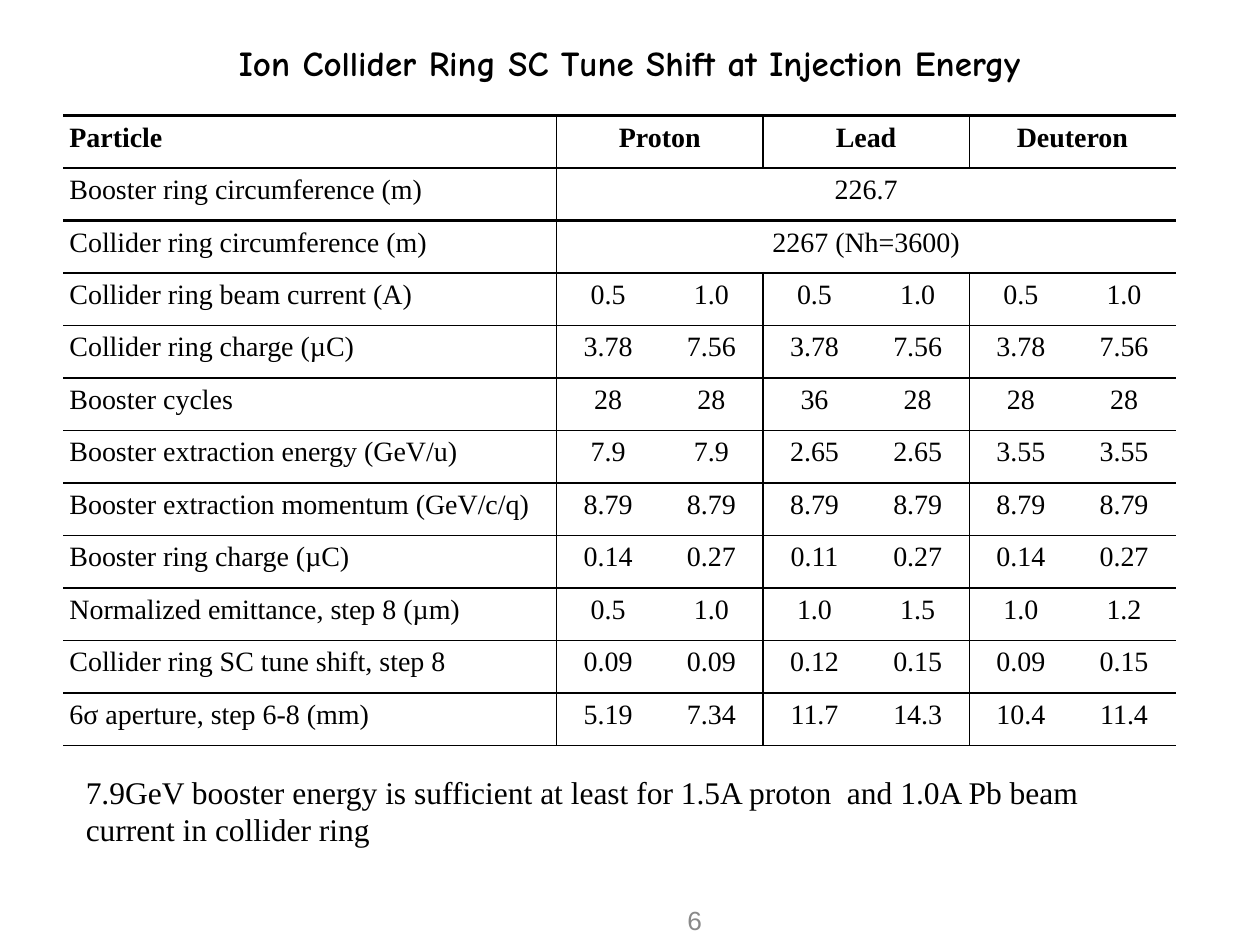
from lxml import etree
from pptx import Presentation
from pptx.dml.color import RGBColor
from pptx.enum.text import MSO_ANCHOR, PP_ALIGN
from pptx.oxml.ns import qn
from pptx.util import Cm, Pt

LEFT, CENTER, RIGHT = PP_ALIGN.LEFT, PP_ALIGN.CENTER, PP_ALIGN.RIGHT
TOP, MIDDLE = MSO_ANCHOR.TOP, MSO_ANCHOR.MIDDLE

BLACK = "000000"
GRAY = "898989"
SERIF = "Times New Roman"

TITLE_FORMAT = {"name": "Comic Neue", "size": Pt(20), "bold": True}
TABLE_FORMAT = {"name": SERIF, "size": Pt(16), "bold": False}
HEADER_FORMAT = {**TABLE_FORMAT, "bold": True}
NOTE_FORMAT = {"name": SERIF, "size": Pt(18)}
NUMBER_FORMAT = {"name": "Arial", "size": Pt(15)}

VALUE_COLUMNS = 6
HEAVY_LINES = 4
LABEL_WIDTH = Cm(9.95)
CELL_MARGINS = dict.fromkeys(
    ("margin_left", "margin_right", "margin_top", "margin_bottom"), Cm(0.13)
)

ROWS = [
    ("Particle", "Proton", "Lead", "Deuteron"),
    ("Booster ring circumference (m)", "226.7"),
    ("Collider ring circumference (m)", "2267 (Nh=3600)"),
    ("Collider ring beam current (A)", "0.5", "1.0", "0.5", "1.0", "0.5", "1.0"),
    ("Collider ring charge (µC)", "3.78", "7.56", "3.78", "7.56", "3.78", "7.56"),
    ("Booster cycles", "28", "28", "36", "28", "28", "28"),
    ("Booster extraction energy (GeV/u)", "7.9", "7.9", "2.65", "2.65", "3.55", "3.55"),
    ("Booster extraction momentum (GeV/c/q)", "8.79", "8.79", "8.79", "8.79", "8.79", "8.79"),
    ("Booster ring charge (µC)", "0.14", "0.27", "0.11", "0.27", "0.14", "0.27"),
    ("Normalized emittance, step 8 (µm)", "0.5", "1.0", "1.0", "1.5", "1.0", "1.2"),
    ("Collider ring SC tune shift, step 8", "0.09", "0.09", "0.12", "0.15", "0.09", "0.15"),
    ("6σ aperture, step 6-8 (mm)", "5.19", "7.34", "11.7", "14.3", "10.4", "11.4"),
]


def color(value):
    """Return the colour for a hex string."""
    return RGBColor.from_string(value)


def set_attributes(target, values):
    """Set each attribute of the target from a dict."""
    for name, value in values.items():
        setattr(target, name, value)


def write_text(text_frame, text, text_format, alignment=LEFT, text_color=BLACK):
    """Write one formatted paragraph and return it."""
    paragraph = text_frame.paragraphs[0]
    paragraph.alignment = alignment
    run = paragraph.add_run()
    run.text = text
    set_attributes(run.font, text_format)
    run.font.color.rgb = color(text_color)
    return paragraph


def add_text(slide, box, text, text_format, alignment=LEFT, anchor=TOP, text_color=BLACK):
    """Place a wrapped text box."""
    text_frame = slide.shapes.add_textbox(*box).text_frame
    set_attributes(text_frame, {"word_wrap": True, "vertical_anchor": anchor})
    write_text(text_frame, text, text_format, alignment, text_color)


def set_borders(cell, widths):
    """Draw the cell borders, given in points by side, and hide those of zero."""
    properties = cell._tc.get_or_add_tcPr()
    for side in "LRTB":
        width = widths[side]
        line = etree.SubElement(properties, qn(f"a:ln{side}"), w=str(Pt(width)))
        if width:
            fill = etree.SubElement(line, qn("a:solidFill"))
            etree.SubElement(fill, qn("a:srgbClr"), val=BLACK)
        else:
            etree.SubElement(line, qn("a:noFill"))


def style_cell(cell, row, column, span):
    """Set the margins, borders and fill of one table cell."""
    set_attributes(cell, CELL_MARGINS)
    has_left = column % 2 == 1 and (column - 1) % span == 0
    has_right = column == 0 or (
        column % 2 == 0 and column % span == 0 and column < VALUE_COLUMNS
    )
    set_borders(cell, {
        "L": int(has_left),
        "R": int(has_right),
        "T": 1.5 if row < HEAVY_LINES else 1,
        "B": 1.5 if row + 1 < HEAVY_LINES else 1,
    })
    cell.fill.background()


def add_parameter_table(slide, box):
    """Place the ring parameter table, spreading the values of each row evenly."""
    left, top, width, height = box
    table = slide.shapes.add_table(len(ROWS), VALUE_COLUMNS + 1, *box).table
    set_attributes(table, {"first_row": False, "horz_banding": False})
    for column in table.columns:
        column.width = (width - LABEL_WIDTH) // VALUE_COLUMNS
    table.columns[0].width = LABEL_WIDTH
    for row, (label, *values) in enumerate(ROWS):
        table.rows[row].height = height // len(ROWS)
        span = VALUE_COLUMNS // len(values)
        text_format = TABLE_FORMAT if row else HEADER_FORMAT
        for column in range(VALUE_COLUMNS + 1):
            style_cell(table.cell(row, column), row, column, span)
        write_text(table.cell(row, 0).text_frame, label, text_format).space_after = Pt(3)
        for index, value in enumerate(values):
            first = 1 + index * span
            cell = table.cell(row, first)
            if span > 1:
                cell.merge(table.cell(row, first + span - 1))
            write_text(cell.text_frame, value, text_format, CENTER).space_after = Pt(3)


def main():
    """Build and save the presentation."""
    presentation = Presentation()
    set_attributes(presentation, {"slide_width": Cm(25.4), "slide_height": Cm(19.05)})
    slide = presentation.slides.add_slide(presentation.slide_layouts[6])
    add_text(
        slide, (Cm(1.9), Cm(0), Cm(21.6), Cm(2.54)),
        "Ion Collider Ring SC Tune Shift at Injection Energy",
        TITLE_FORMAT, CENTER, MIDDLE,
    )
    add_text(
        slide, (Cm(12.5), Cm(18.03), Cm(1.9), Cm(1.02)),
        "6", NUMBER_FORMAT, RIGHT, MIDDLE, GRAY,
    )
    add_parameter_table(slide, (Cm(1.27), Cm(2.33), Cm(22.43), Cm(12.7)))
    add_text(
        slide, (Cm(1.48), Cm(15.45), Cm(21.8), Cm(1.8)),
        "7.9GeV booster energy is sufficient at least for 1.5A proton  and 1.0A Pb beam "
        "current in collider ring",
        NOTE_FORMAT,
    )
    presentation.save("out.pptx")


if __name__ == "__main__":
    main()
